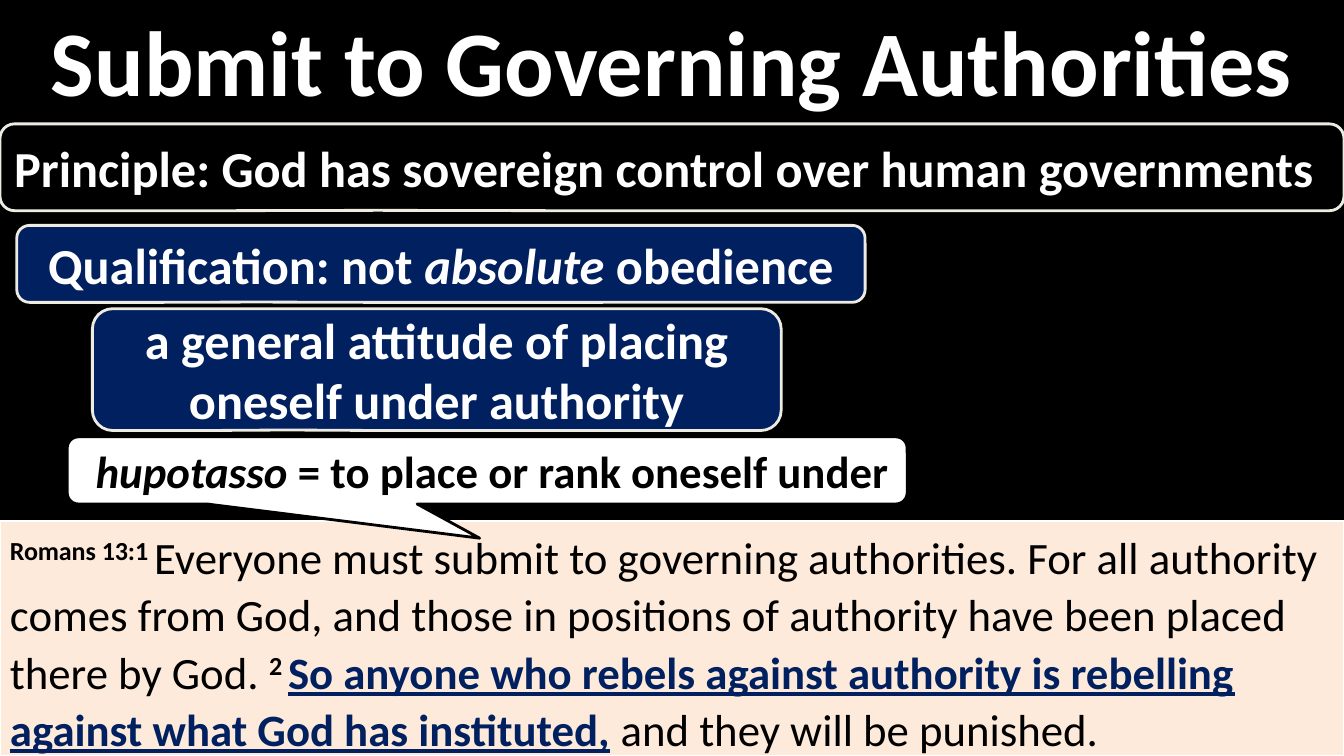
from lxml.etree import SubElement
from pptx import Presentation
from pptx.dml.color import RGBColor
from pptx.enum.shapes import MSO_SHAPE
from pptx.enum.text import MSO_ANCHOR, MSO_AUTO_SIZE, PP_ALIGN
from pptx.oxml.ns import qn
from pptx.util import Pt

COLORS = {
    "black": "000000",
    "white": "FFFFFF",
    "navy": "002060",
    "cream": "EEECE1",
    "peach": "FDEADA",
}
EDGE_TAIL = (-0.219, 0.496)


class Deck:
    """Holds the style and the current slide."""

    font = "Calibri"

    def __init__(self, prs):
        """Add a black title-only slide."""
        self.s = prs.slides.add_slide(prs.slide_layouts[5])
        self.paint(self.s.background.fill, "black")

    def paint(self, fill, color):
        """Make a fill solid in a named colour."""
        fill.solid()
        fill.fore_color.rgb = RGBColor.from_string(COLORS[color])

    def add_text(self, sp, runs, size, color, align, anchor=MSO_ANCHOR.MIDDLE):
        """Set one paragraph from (text, style) runs and return it."""
        tf = sp.text_frame
        tf.word_wrap = True
        tf.auto_size = MSO_AUTO_SIZE.NONE
        tf.vertical_anchor = anchor
        p = tf.paragraphs[0]
        p.alignment = align
        for text, style in runs:
            r = p.add_run()
            r.text = text
            f = r.font
            f.name, f.size = self.font, Pt(size)
            f.bold = style.get("bold", True)
            f.italic = style.get("italic", False)
            f.underline = style.get("underline", False)
            f.color.rgb = RGBColor.from_string(COLORS[style.get("color", color)])
            if style.get("raised"):
                r._r.get_or_add_rPr().set("baseline", "30000")
        return p

    def title(self, box, text, size):
        """Move and fill the title placeholder."""
        sp = self.s.shapes.title
        sp.left, sp.top, sp.width, sp.height = map(Pt, box)
        self.add_text(sp, [(text, {})], size, "white", PP_ALIGN.CENTER)

    def shape(self, kind, box, fill, line, weight):
        """Add a filled and outlined preset shape."""
        sp = self.s.shapes.add_shape(kind, *map(Pt, box))
        sp.shadow.inherit = False
        self.paint(sp.fill, fill)
        self.paint(sp.line.fill, line)
        sp.line.width = Pt(weight)
        return sp

    def callout(self, box, runs, fill="navy", line="cream", color="white",
                size=36, tail=EDGE_TAIL, align=PP_ALIGN.CENTER, opacity=100):
        """Add a rounded callout with bold text."""
        sp = self.shape(MSO_SHAPE.ROUNDED_RECTANGULAR_CALLOUT, box, fill, line, 2)
        sp.adjustments[0], sp.adjustments[1] = tail
        if opacity < 100:
            rgb = sp._element.spPr.find(qn("a:solidFill"))[0]
            SubElement(rgb, qn("a:alpha")).set("val", str(opacity * 1000))
        self.add_text(sp, runs, size, color, align)

    def passage(self, box, runs):
        """Add the scripture panel."""
        sp = self.shape(MSO_SHAPE.RECTANGLE, box, "peach", "white", 1.5)
        p = self.add_text(sp, runs, 32, "black", PP_ALIGN.LEFT, MSO_ANCHOR.TOP)
        p.line_spacing = 1.07
        p.space_after = Pt(8)


def main():
    """Build and save the slide."""
    prs = Presentation()
    prs.slide_width, prs.slide_height = Pt(960), Pt(540)
    deck = Deck(prs)
    italic, plain, raised = {"italic": True}, {"bold": False}, {"raised": True}

    deck.title((0, 7, 960, 70.8), "Submit to Governing Authorities", 66)
    deck.callout(
        (0, 88.5, 960, 62),
        [("Principle: God has sovereign control over human governments", {})],
        fill="black", align=PP_ALIGN.LEFT, opacity=64)
    deck.passage((0, 372, 960, 168), [
        ("Romans 13:1 ", raised),
        ("Everyone must submit to governing authorities. For all authority "
         "comes from God, and those in positions of authority have been "
         "placed there by God. ", plain),
        ("2 ", raised),
        ("So anyone who rebels against authority is rebelling against what "
         "God has instituted,", {"color": "navy", "underline": True}),
        (" and they will be punished.", plain),
    ])
    deck.callout((12, 161, 606, 55), [
        ("Qualification: not ", {}), ("absolute", italic), (" obedience", {})])
    deck.callout(
        (48, 312, 600, 48),
        [(" ", {}), ("hupotasso", italic),
         (" = to place or rank oneself under", {})],
        fill="white", line="black", color="black", size=32,
        tail=(-0.009, 1.009))
    deck.callout(
        (66, 220.5, 492, 87),
        [("a general attitude of placing oneself under authority", {})])
    prs.save("out.pptx")


if __name__ == "__main__":
    main()
